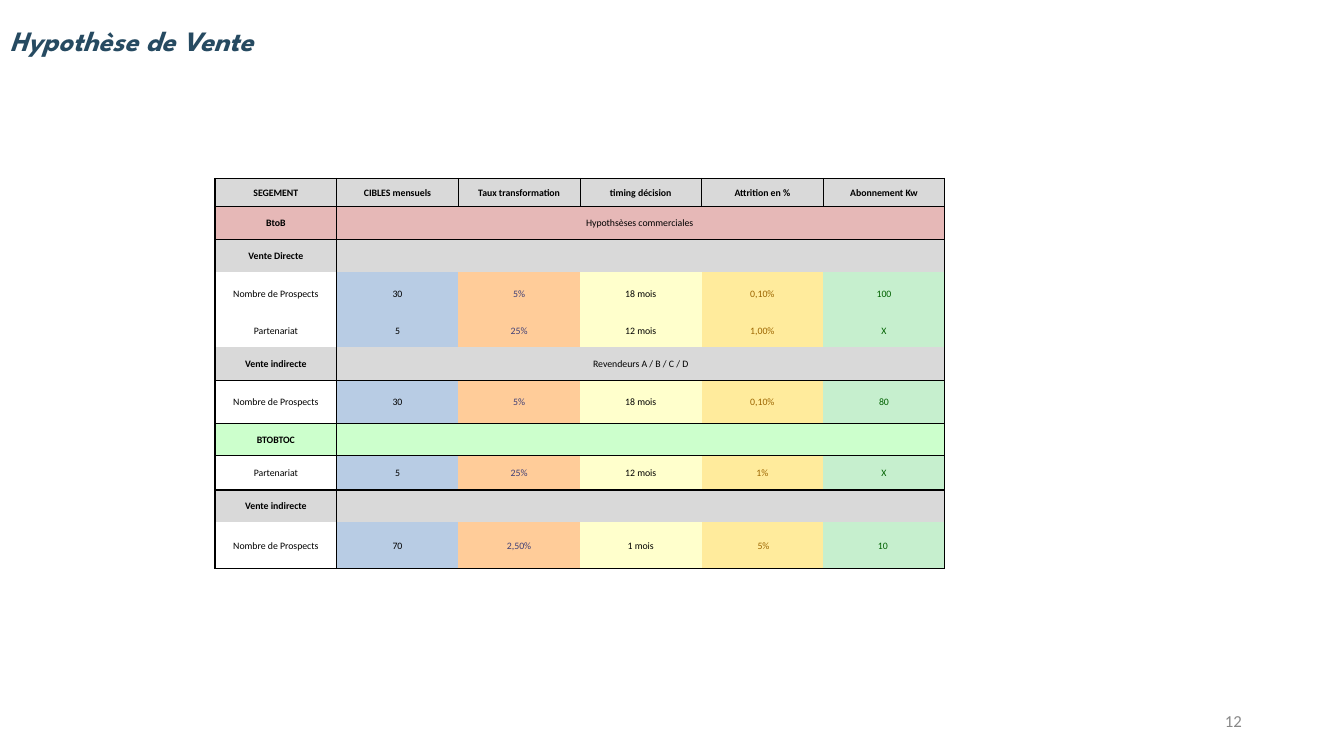
"""Build the sales assumptions slide."""
from dataclasses import dataclass

from lxml import etree
from pptx import Presentation
from pptx.dml.color import RGBColor
from pptx.enum.text import MSO_ANCHOR, PP_ALIGN
from pptx.oxml.ns import qn
from pptx.util import Emu, Inches, Pt

LEFT, CENTER, RIGHT = PP_ALIGN.LEFT, PP_ALIGN.CENTER, PP_ALIGN.RIGHT
TOP, MIDDLE = MSO_ANCHOR.TOP, MSO_ANCHOR.MIDDLE
WIDTH, HEIGHT = Inches(13.33), Inches(7.5)
BLACK, WHITE, GREY, ROSE, MINT = "000000", "FFFFFF", "D9D9D9", "E6B8B7", "CCFFCC"
DATA_FILLS = [WHITE, "B8CCE4", "FFCC99", "FFFFCC", "FFEB9C", "C6EFCE"]
DATA_COLORS = [BLACK, BLACK, "3F3F76", BLACK, "9C6500", "006100"]
COLUMNS = len(DATA_FILLS)
TABLE_LEFT, TABLE_TOP, TABLE_WIDTH = 16, 23.6, 54.3


@dataclass
class Row:
    height: float
    rule_above: float
    texts: list[str]
    band: str = ""
    divider: float = 0


ROWS = [
    Row(3.73, 1, ["SEGEMENT", "CIBLES mensuels", "Taux transformation",
                  "timing décision", "Attrition en %", "Abonnement Kw"], GREY, 0.5),
    Row(4.3, 1, ["BtoB", "Hypothsèses commerciales "], ROSE),
    Row(4.3, 1, ["Vente Directe", ""], GREY),
    Row(5.73, 0, ["Nombre de Prospects", "30", "5%", "18 mois", "0,10%", "100"]),
    Row(4.3, 0, ["Partenariat", "5", "25%", "12 mois", "1,00%", "X"]),
    Row(4.3, 0, ["Vente indirecte", "Revendeurs A / B / C / D"], GREY),
    Row(5.73, 0.5, ["Nombre de Prospects", "30", "5%", "18 mois", "0,10%", "80"]),
    Row(4.3, 0.5, ["BTOBTOC", ""], MINT),
    Row(4.53, 0.5, ["Partenariat", "5", "25%", "12 mois", "1%", "X"]),
    Row(4.3, 1, ["Vente indirecte", ""], GREY),
    Row(6.07, 0, ["Nombre de Prospects", "70", "2,50%", "1 mois", " 5%", "10 "]),
]
RULES = [row.rule_above for row in ROWS] + [1]


def across(percent: float) -> Emu:
    """Return a share of the slide width."""
    return Emu(round(WIDTH * percent / 100))


def down(percent: float) -> Emu:
    """Return a share of the slide height."""
    return Emu(round(HEIGHT * percent / 100))


def color(value: str) -> RGBColor:
    """Turn a hex string into a colour."""
    return RGBColor.from_string(value)


def write(frame, text: str, *, size: float, fill: str = BLACK, font: str = "Calibri",
          bold: bool = False, italic: bool = False, align=LEFT) -> None:
    """Write one formatted line into a text frame."""
    para = frame.paragraphs[0]
    para.alignment = align
    span = para.add_run()
    span.text = text
    span.font.name, span.font.size = font, Pt(size)
    span.font.bold, span.font.italic = bold, italic
    span.font.color.rgb = color(fill)


def add_text(page, text: str, left: float, top: float, width: float, height: float,
             *, anchor=TOP, **style) -> None:
    """Add a text box placed by shares of the slide."""
    box = page.shapes.add_textbox(across(left), down(top), across(width), down(height))
    box.text_frame.word_wrap = True
    box.text_frame.vertical_anchor = anchor
    write(box.text_frame, text, **style)


def set_borders(cell, **weights: float) -> None:
    """Draw black cell edges, leaving out those of zero weight."""
    properties = cell._tc.get_or_add_tcPr()
    for edge, weight in weights.items():
        line = etree.SubElement(properties, qn(f"a:ln{edge}"), w=str(Pt(weight)))
        if weight:
            paint = etree.SubElement(line, qn("a:solidFill"))
            etree.SubElement(paint, qn("a:srgbClr"), val=BLACK)
        else:
            etree.SubElement(line, qn("a:noFill"))


def fill_row(table, index: int, row: Row) -> None:
    """Fill, border and write one table row."""
    merged = len(row.texts) < COLUMNS
    for column in range(COLUMNS):
        cell = table.cell(index, column)
        starts_frame = column < 2
        ends_frame = column in (0, COLUMNS - 1) or merged
        set_borders(cell, L=1 if starts_frame else row.divider,
                    R=1 if ends_frame else row.divider,
                    T=RULES[index], B=RULES[index + 1])
        cell.fill.solid()
        cell.fill.fore_color.rgb = color(row.band or DATA_FILLS[column])
        cell.margin_left = cell.margin_right = cell.margin_top = Inches(0.01)
        cell.margin_bottom = 0
        cell.vertical_anchor = MIDDLE
        if column < len(row.texts):
            write(cell.text_frame, row.texts[column], size=7, align=CENTER,
                  fill=BLACK if row.band else DATA_COLORS[column],
                  bold=bool(row.band) and not (merged and column))
    if merged:
        table.cell(index, 1).merge(table.cell(index, COLUMNS - 1))


def add_sales_table(page) -> None:
    """Add the table of sales assumptions."""
    total = sum(row.height for row in ROWS)
    table = page.shapes.add_table(len(ROWS), COLUMNS, across(TABLE_LEFT), down(TABLE_TOP),
                                  across(TABLE_WIDTH), down(total)).table
    table.first_row = table.horz_banding = False
    for column in table.columns:
        column.width = across(TABLE_WIDTH / COLUMNS)
    for index, row in enumerate(ROWS):
        table.rows[index].height = down(row.height)
        fill_row(table, index, row)


def main() -> None:
    """Create the deck and save it."""
    deck = Presentation()
    deck.slide_width, deck.slide_height = WIDTH, HEIGHT
    page = deck.slides.add_slide(deck.slide_layouts[6])
    add_text(page, "12", 70.65, 92.67, 22.5, 5.33, anchor=MIDDLE, size=12,
             fill="888888", align=RIGHT)
    add_text(page, "Hypothèse de Vente", 0, 2.4, 56.8, 5.87, size=20, fill="264A61",
             font="League Spartan", bold=True, italic=True)
    add_sales_table(page)
    deck.save("out.pptx")


if __name__ == "__main__":
    main()
